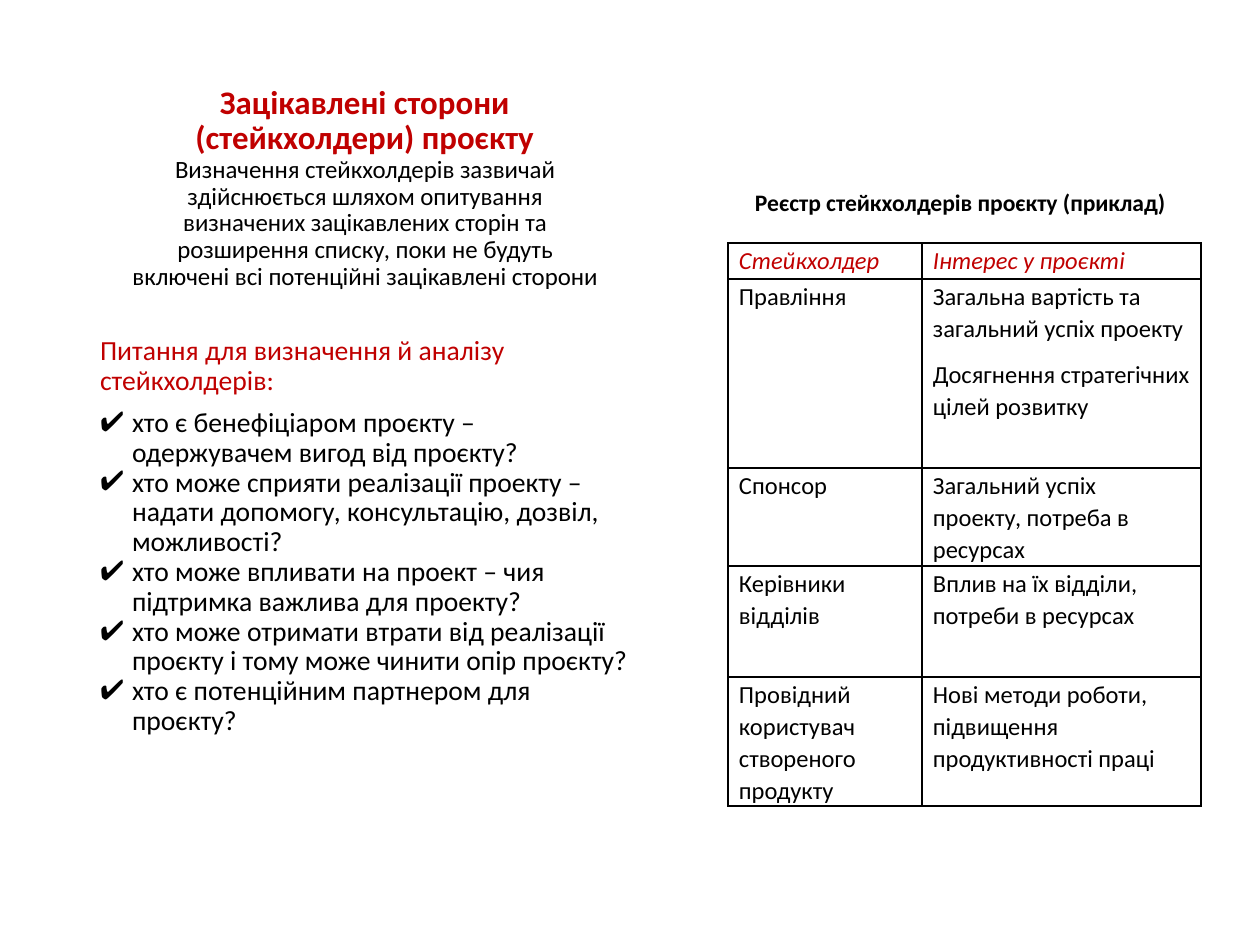
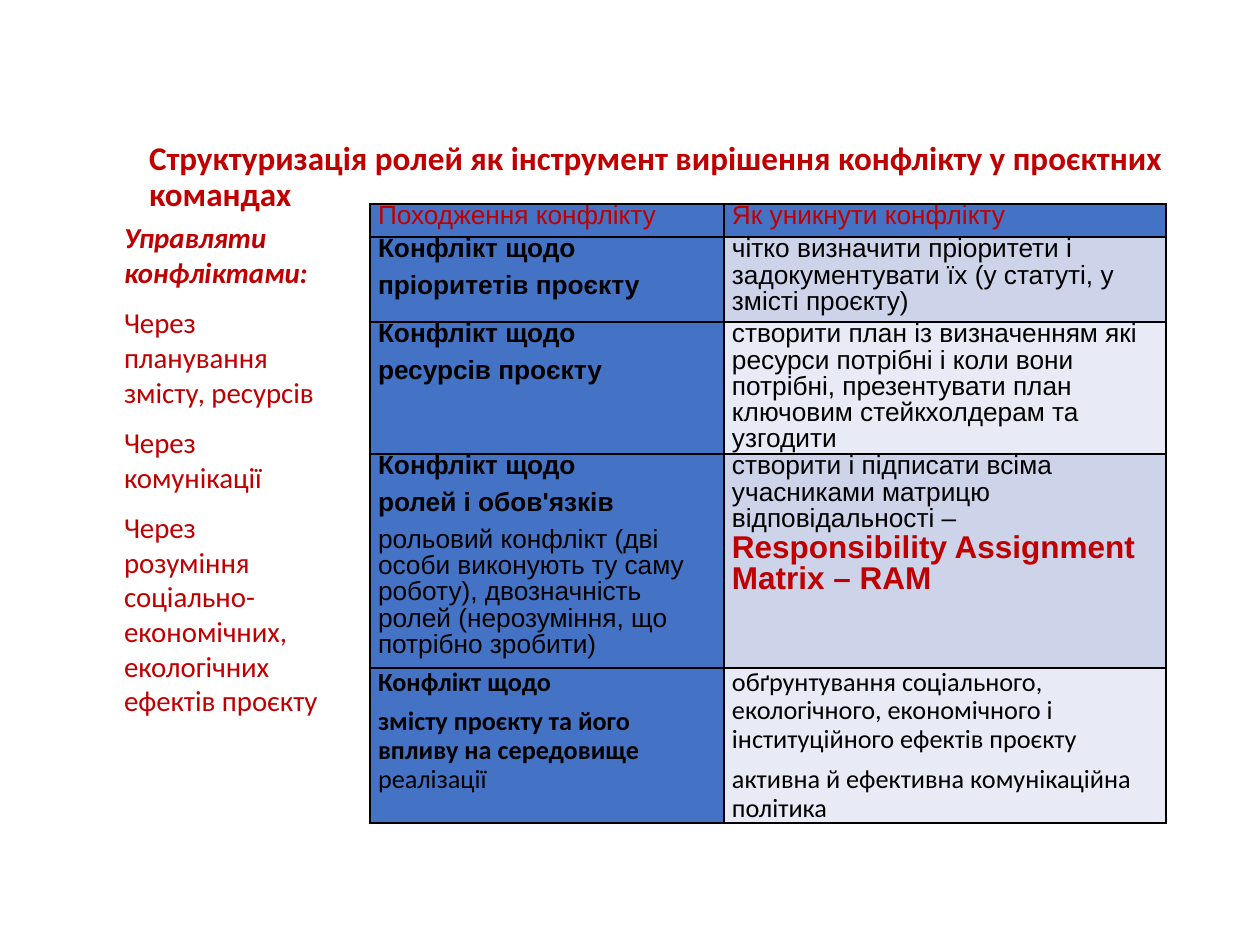
from lxml.etree import SubElement
from pptx import Presentation
from pptx.dml.color import RGBColor
from pptx.enum.text import MSO_ANCHOR, MSO_AUTO_SIZE, PP_ALIGN
from pptx.oxml.ns import qn
from pptx.util import Pt

COLORS = {"red": "C00000", "black": "000000", "blue": "4472C4",
          "band": "CDD4EA", "pale": "E8EBF5"}

# Run styles: size, font, colour, bold, italic
STYLES = {
    "head": (18.8, "Calibri", "red", True, False),
    "intro": (14.2, "Calibri", "black", False, False),
    "lead": (15.8, "Calibri", "red", False, False),
    "item": (15.8, "Calibri", "black", False, False),
    "name": (13.5, "Calibri", "black", True, False),
    "top": (14, "Calibri", "red", False, True),
    "cell": (14, "Calibri", "black", False, False),
    "title": (18.9, "Calibri", "red", True, False),
    "key": (16.5, "Calibri", "red", True, True),
    "way": (16.5, "Calibri", "red", False, False),
    "label": (15, "Arial", "red", False, False),
    "cause": (15, "Arial", "black", True, False),
    "advice": (15, "Arial", "black", False, False),
    "matrix": (18, "Arial", "red", True, False),
    "cause2": (15, "Calibri", "black", True, False),
    "advice2": (15, "Calibri", "black", False, False),
}


def lines(style, *texts):
    """Make one paragraph of a single run from each text."""
    return [[(text, style)] for text in texts]


PARTIES = lines("head", "Зацікавлені сторони (стейкхолдери) проєкту") + lines(
    "intro", "Визначення стейкхолдерів зазвичай здійснюється шляхом опитування "
    "визначених зацікавлених сторін та розширення списку, поки не будуть "
    "включені всі потенційні зацікавлені сторони")
LEAD = lines("lead", "Питання для визначення й аналізу стейкхолдерів:")
ASKS = lines(
    "item",
    "хто є бенефіціаром проєкту – одержувачем вигод від проєкту?",
    "хто може сприяти реалізації проекту – надати допомогу, консультацію, "
    "дозвіл, можливості?",
    "хто може впливати на проект – чия підтримка важлива для проекту?",
    "хто може отримати втрати від реалізації проєкту і тому може чинити "
    "опір проєкту?",
    "хто є потенційним партнером для проєкту?")
CAPTION = lines("name", "Реєстр стейкхолдерів проєкту (приклад)")
REGISTER = [
    [lines("top", "Cтейкхолдер"), lines("top", "Інтерес у проєкті")],
    [lines("cell", "Правління"),
     lines("cell", "Загальна вартість та загальний успіх проекту",
           "Досягнення стратегічних цілей розвитку")],
    [lines("cell", "Спонсор"),
     lines("cell", "Загальний успіх проекту, потреба в ресурсах")],
    [lines("cell", "Керівники відділів"),
     lines("cell", "Вплив на їх відділи, потреби в ресурсах")],
    [lines("cell", "Провідний користувач створеного продукту"),
     lines("cell", "Нові методи роботи, підвищення продуктивності праці")],
]

ROLES = lines("title", "Структуризація ролей як інструмент вирішення конфлікту "
              "у проєктних командах")
WAYS = lines("key", "Управляти конфліктами:") + lines(
    "way", "Через планування змісту, ресурсів", "Через комунікації",
    "Через розуміння соціально-економічних, екологічних ефектів проєкту")
CONFLICTS = [
    [lines("label", "Походження конфлікту"),
     lines("label", "Як уникнути конфлікту")],
    [lines("cause", "Конфлікт щодо", "пріоритетів проєкту"),
     lines("advice", "чітко визначити пріоритети і задокументувати їх "
           "(у статуті, у змісті проєкту)")],
    [lines("cause", "Конфлікт щодо", "ресурсів проєкту"),
     lines("advice", "створити план із визначенням які ресурси потрібні і коли "
           "вони потрібні, презентувати план ключовим стейкхолдерам та узгодити")],
    [lines("cause", "Конфлікт щодо", "ролей і обов'язків")
     + lines("advice", "рольовий конфлікт (дві особи виконують ту саму роботу), "
             "двозначність ролей (нерозуміння, що потрібно зробити)"),
     [[("створити і підписати всіма учасниками матрицю відповідальності – ",
        "advice"), ("Responsibility Assignment Matrix – RAM", "matrix")]]],
    [lines("cause2", "Конфлікт щодо")
     + [[("змісту проєкту та його впливу на середовище ", "cause2"),
         ("реалізації", "advice2")]],
     lines("advice2", "обґрунтування соціального, екологічного, економічного і "
           "інституційного ефектів проєкту",
           "активна й ефективна комунікаційна політика")],
]


def px(count):
    return round(count * 914400 / 126)


def rgb(name):
    return RGBColor.from_string(COLORS[name])


def write(frame, paras, spacing, gap=0, align=PP_ALIGN.LEFT):
    """Fill a text frame; gap is the space in points before later paragraphs."""
    for i, runs in enumerate(paras):
        para = frame.paragraphs[0] if i == 0 else frame.add_paragraph()
        para.alignment = align
        para.line_spacing = spacing
        para.space_before = Pt(gap if i else 0)
        para.space_after = Pt(0)
        for text, style in runs:
            run = para.add_run()
            run.text = text
            font = run.font
            size, font.name, color, font.bold, font.italic = STYLES[style]
            font.size = Pt(size)
            font.color.rgb = rgb(color)


def place(shape, box, anchor, inset=(13, 6)):
    shape.left, shape.top, shape.width, shape.height = map(px, box)
    frame = shape.text_frame
    frame.word_wrap = True
    frame.auto_size = MSO_AUTO_SIZE.NONE
    frame.vertical_anchor = anchor
    frame.margin_left = frame.margin_right = px(inset[0])
    frame.margin_top = frame.margin_bottom = px(inset[1])
    return frame


def mark(para, sign=None):
    """Replace the template bullet by a check sign, or by none."""
    props = para._p.get_or_add_pPr()
    indent = px(32) if sign else 0
    props.set("marL", str(indent))
    props.set("indent", str(-indent))
    if sign:
        tint = SubElement(props, qn("a:buClr"))
        SubElement(tint, qn("a:srgbClr"), val=COLORS["black"])
        SubElement(props, qn("a:buChar"), char=sign)
    else:
        SubElement(props, qn("a:buNone"))


def edge(cell):
    props = cell._tc.get_or_add_tcPr()
    for side in ("lnL", "lnR", "lnT", "lnB"):
        line = SubElement(props, qn("a:" + side), w=str(Pt(1)))
        fill = SubElement(line, qn("a:solidFill"))
        SubElement(fill, qn("a:srgbClr"), val=COLORS["black"])


def grid(slide, rows, spot, widths, heights, inset, spacing, gap, shade):
    """Add a ruled table; shade gives the fill name for a row and column."""
    frame = slide.shapes.add_table(
        len(rows), len(widths), *map(px, (*spot, sum(widths), sum(heights))))
    table = frame.table
    table.first_row = table.horz_banding = False
    for col, width in zip(table.columns, widths):
        col.width = px(width)
    for r, row in enumerate(rows):
        table.rows[r].height = px(heights[r])
        for c, paras in enumerate(row):
            cell = table.cell(r, c)
            cell.margin_left = cell.margin_right = px(inset[0])
            cell.margin_top, cell.margin_bottom = px(inset[1]), 0
            edge(cell)
            color = shade(r, c)
            if color:
                cell.fill.solid()
                cell.fill.fore_color.rgb = rgb(color)
            else:
                cell.fill.background()
            write(cell.text_frame, paras, spacing, gap)


def tint(row, col):
    if row == 0 or col == 0:
        return "blue"
    return "band" if row % 2 else "pale"


def people(deck):
    slide = deck.slides.add_slide(deck.slide_layouts[1])
    title, body = slide.placeholders
    frame = place(title, (118, 77, 494, 220), MSO_ANCHOR.BOTTOM)
    write(frame, PARTIES, 0.9, align=PP_ALIGN.CENTER)
    frame = place(body, (87, 331, 558, 503), MSO_ANCHOR.TOP)
    write(frame, LEAD + ASKS, 0.9)
    first, *rest = frame.paragraphs
    mark(first)
    rest[0].space_before = Pt(6.8)
    for para in rest:
        mark(para, "✔")
    grid(slide, REGISTER, (728, 243), (194, 279), (36, 189, 98, 111, 129),
         (11, 1), 1.07, 8, lambda row, col: None)
    label = slide.shapes.add_textbox(0, 0, 0, 0)
    frame = place(label, (746, 186, 494, 35), MSO_ANCHOR.BOTTOM, (9, 5))
    write(frame, CAPTION, 0.8)


def roles(deck):
    slide = deck.slides.add_slide(deck.slide_layouts[1])
    title, body = slide.placeholders
    frame = place(title, (136, 145, 1113, 66), MSO_ANCHOR.MIDDLE)
    write(frame, ROLES, 0.9)
    frame = place(body, (111, 214, 223, 559), MSO_ANCHOR.TOP)
    write(frame, WAYS, 1.0, 9, PP_ALIGN.JUSTIFY)
    for para in frame.paragraphs:
        mark(para)
    grid(slide, CONFLICTS, (370, 204), (354, 442), (33, 85, 132, 214, 155),
         (8, 0), 0.9, 6, tint)


def main():
    deck = Presentation()
    deck.slide_width, deck.slide_height = px(1260), px(945)
    people(deck)
    roles(deck)
    deck.save("out.pptx")


if __name__ == "__main__":
    main()
